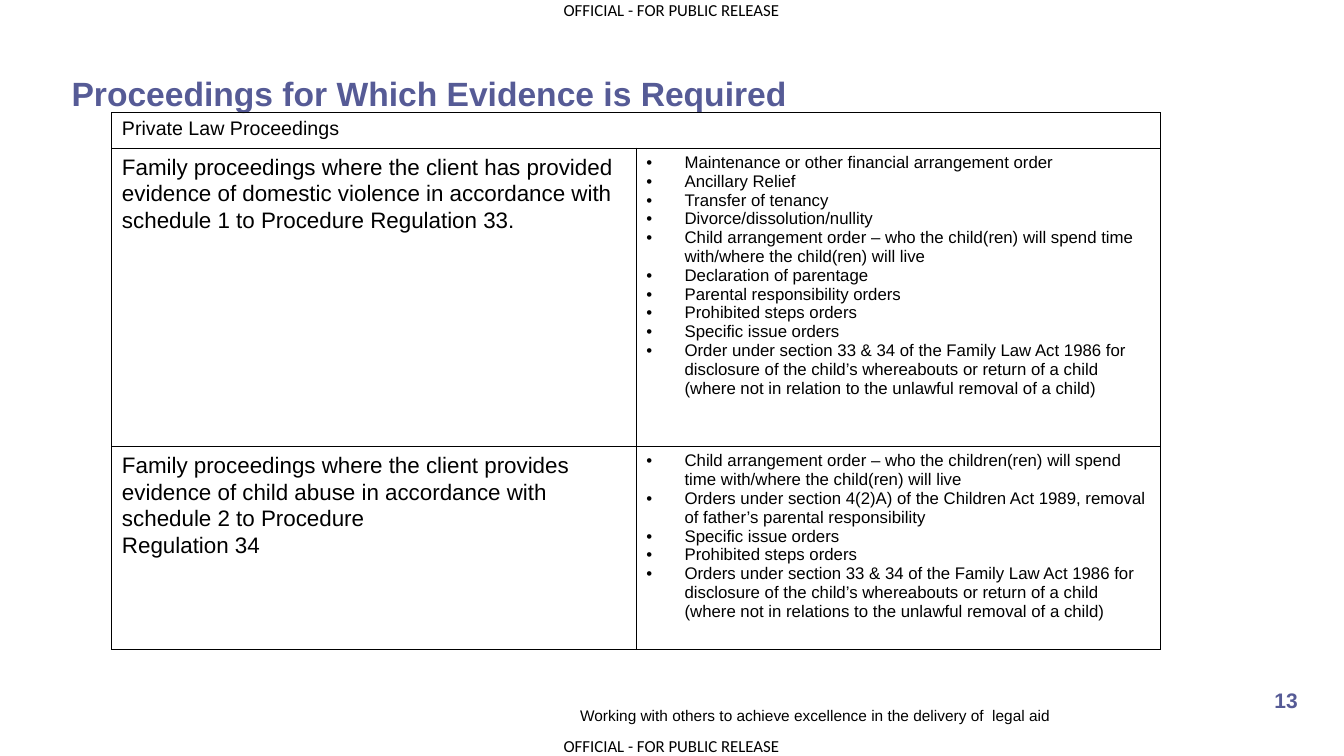
from dataclasses import dataclass
from lxml import etree
from pptx import Presentation
from pptx import util as u
from pptx.dml.color import RGBColor
from pptx.enum import text
from pptx.oxml.ns import qn

MARKING = "OFFICIAL - FOR PUBLIC RELEASE"
TITLE = "Proceedings for Which Evidence is Required"
FOOTER = "Working with others to achieve excellence in the delivery of  legal aid"
PAGE_NUMBER = "13"
TABLE_HEADING = "Private Law Proceedings"
PROCEEDINGS = [
    (
        ["Family proceedings where the client has provided evidence of domestic violence "
         "in accordance with schedule 1 to Procedure Regulation 33."],
        [
            "Maintenance or other financial arrangement order",
            "Ancillary Relief",
            "Transfer of tenancy",
            "Divorce/dissolution/nullity",
            "Child arrangement order – who the child(ren) will spend time "
            "with/where the child(ren) will live",
            "Declaration of parentage",
            "Parental responsibility orders",
            "Prohibited steps orders",
            "Specific issue orders",
            "Order under section 33 & 34 of the Family Law Act 1986 for disclosure of the "
            "child’s whereabouts or return of a child (where not in relation to the "
            "unlawful removal of a child)",
        ],
    ),
    (
        ["Family proceedings where the client provides evidence of child abuse "
         "in accordance with schedule 2 to Procedure",
         "Regulation 34"],
        [
            "Child arrangement order – who the children(ren) will spend time "
            "with/where the child(ren) will live",
            "Orders under section 4(2)A) of the Children Act 1989, removal of father’s "
            "parental responsibility",
            "Specific issue orders",
            "Prohibited steps orders",
            "Orders under section 33 & 34 of the Family Law Act 1986 for disclosure of the "
            "child’s whereabouts or return of a child (where not in relations to the "
            "unlawful removal of a child)",
        ],
    ),
]


@dataclass(frozen=True)
class Theme:
    accent: str = "565B96"
    ink: str = "000000"
    font: str = "Arial"
    marking_font: str = "Calibri"
    title: int = 24
    case: int = 16
    page: int = 15
    heading: int = 14
    body: int = 12
    footer: int = 11
    border: int = 1


THEME = Theme()
SLIDE_WIDTH, SLIDE_HEIGHT = 1333, 750
MARKING_HEIGHT = 20
TABLE_LEFT, TABLE_TOP = 111, 112
COLUMN_WIDTH = 520
ROW_HEIGHTS = [35, 296, 201]
BULLET_INDENT = 38
CASE_SPACING = 1.07
LEFT, CENTER, RIGHT = text.PP_ALIGN.LEFT, text.PP_ALIGN.CENTER, text.PP_ALIGN.RIGHT


def px(length):
    return u.Emu(length * 9144)


def add_run(paragraph, words, size, color=THEME.ink, bold=False, font=THEME.font):
    run = paragraph.add_run()
    run.text = words
    run.font.name = font
    run.font.size = u.Pt(size)
    run.font.bold = bold
    run.font.color.rgb = RGBColor.from_string(color)


def add_label(slide, box, words, size, align=LEFT, anchor=text.MSO_ANCHOR.MIDDLE, **style):
    frame = slide.shapes.add_textbox(*map(px, box)).text_frame
    frame.word_wrap = True
    frame.vertical_anchor = anchor
    frame.margin_left = frame.margin_right = frame.margin_top = frame.margin_bottom = 0
    paragraph = frame.paragraphs[0]
    paragraph.alignment = align
    add_run(paragraph, words, size, **style)


def add_bullet(paragraph):
    properties = paragraph._p.get_or_add_pPr()
    properties.set("marL", str(px(BULLET_INDENT)))
    properties.set("indent", str(-px(BULLET_INDENT)))
    etree.SubElement(properties, qn("a:buFont")).set("typeface", THEME.font)
    etree.SubElement(properties, qn("a:buChar")).set("char", "•")


def add_borders(cell):
    properties = cell._tc.get_or_add_tcPr()
    for position, side in enumerate(("lnL", "lnR", "lnT", "lnB")):
        line = etree.Element(qn(f"a:{side}"), w=str(u.Pt(THEME.border)))
        fill = etree.SubElement(line, qn("a:solidFill"))
        etree.SubElement(fill, qn("a:srgbClr")).set("val", THEME.ink)
        properties.insert(position, line)


def fill_cell(cell, lines, size, spacing=None, bulleted=False):
    frame = cell.text_frame
    for index, words in enumerate(lines):
        paragraph = frame.add_paragraph() if index else frame.paragraphs[0]
        if spacing:
            paragraph.line_spacing = spacing
        if bulleted:
            add_bullet(paragraph)
        add_run(paragraph, words, size)


def add_proceedings_table(slide):
    table = slide.shapes.add_table(
        len(ROW_HEIGHTS), 2, px(TABLE_LEFT), px(TABLE_TOP),
        px(2 * COLUMN_WIDTH), px(sum(ROW_HEIGHTS))).table
    table.first_row = table.horz_banding = False
    for column in table.columns:
        column.width = px(COLUMN_WIDTH)
    for row, height in zip(table.rows, ROW_HEIGHTS):
        row.height = px(height)
    for cell in table.iter_cells():
        cell.fill.background()
        add_borders(cell)
    table.cell(0, 0).merge(table.cell(0, 1))
    fill_cell(table.cell(0, 0), [TABLE_HEADING], THEME.heading)
    for row, (case, orders) in enumerate(PROCEEDINGS, start=1):
        fill_cell(table.cell(row, 0), case, THEME.case, spacing=CASE_SPACING)
        fill_cell(table.cell(row, 1), orders, THEME.body, bulleted=True)


def main():
    presentation = Presentation()
    presentation.slide_width, presentation.slide_height = px(SLIDE_WIDTH), px(SLIDE_HEIGHT)
    slide = presentation.slides.add_slide(presentation.slide_layouts[6])
    for top in (0, SLIDE_HEIGHT - MARKING_HEIGHT):
        add_label(slide, (559, top, 218, MARKING_HEIGHT), MARKING, THEME.body,
                  anchor=text.MSO_ANCHOR.TOP, font=THEME.marking_font)
    add_label(slide, (71, 73, 1204, 38), TITLE, THEME.title, color=THEME.accent, bold=True)
    add_label(slide, (57, 692, 985, 36), FOOTER, THEME.footer, align=RIGHT)
    add_label(slide, (1251, 675, 49, 40), PAGE_NUMBER, THEME.page, align=CENTER,
              color=THEME.accent, bold=True)
    add_proceedings_table(slide)
    presentation.save("out.pptx")


if __name__ == "__main__":
    main()
